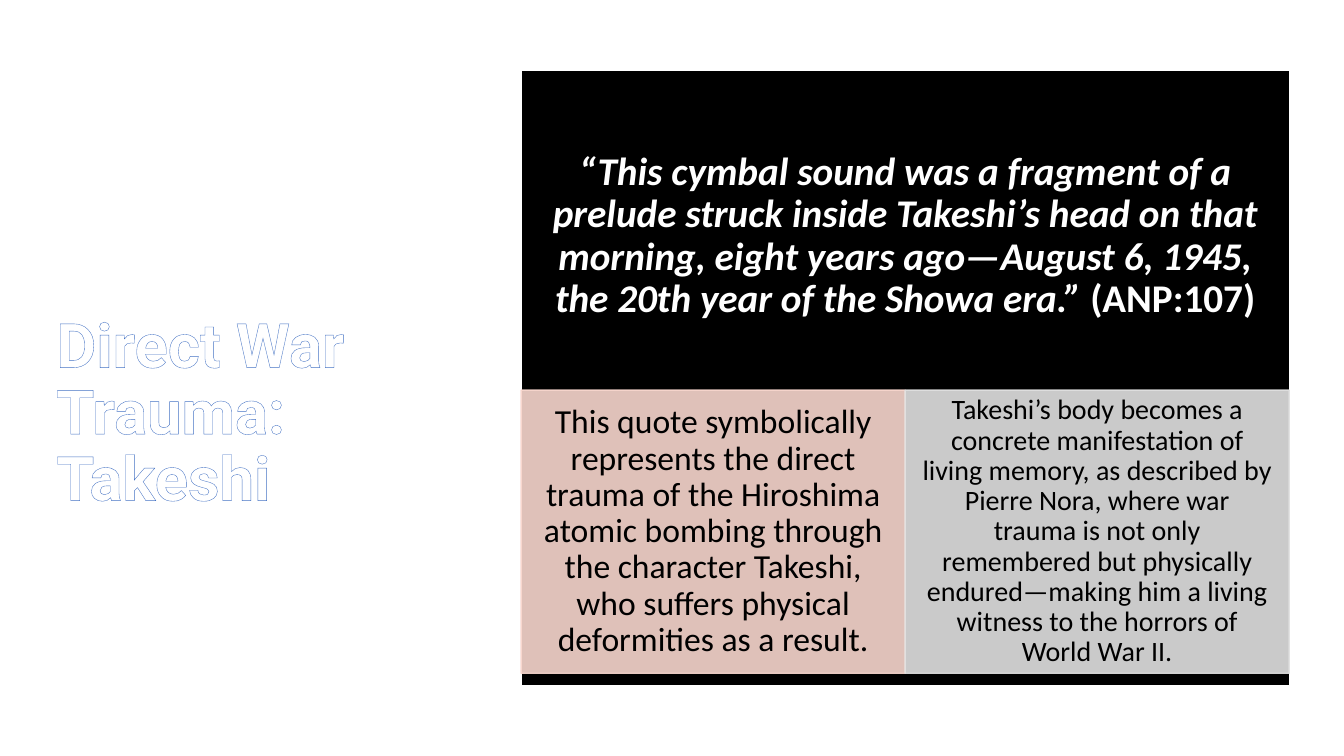
from lxml import etree
from pptx import Presentation
from pptx.dml.color import RGBColor
from pptx.enum.shapes import MSO_SHAPE
from pptx.enum.text import MSO_ANCHOR, PP_ALIGN
from pptx.oxml import parse_xml
from pptx.oxml.ns import nsdecls, qn
from pptx.util import Pt

RECTANGLE = MSO_SHAPE.RECTANGLE
TOP, MIDDLE = MSO_ANCHOR.TOP, MSO_ANCHOR.MIDDLE
LEFT, CENTER = PP_ALIGN.LEFT, PP_ALIGN.CENTER

COLORS = {
    "white": "FFFFFF",
    "black": "000000",
    "outline": "4472C4",
    "rose": "F8D7CE",
    "gray": "E1E1E1",
}


def add_rectangle(slide, left, top, width, height, fill, line, opacity=100):
    shape = slide.shapes.add_shape(RECTANGLE, Pt(left), Pt(top), Pt(width), Pt(height))
    shape.shadow.inherit = False
    shape.fill.solid()
    shape.fill.fore_color.rgb = RGBColor.from_string(COLORS[fill])
    shape.line.color.rgb = RGBColor.from_string(COLORS[line])
    shape.line.width = Pt(1)
    if opacity < 100:
        for color in shape._element.spPr.iter(qn("a:srgbClr")):
            etree.SubElement(color, qn("a:alpha"), val=str(opacity * 1000))
    return shape


def write_text(shape, runs, size, color, font, align, anchor, inset_x, inset_y):
    frame = shape.text_frame
    frame.word_wrap = True
    frame.vertical_anchor = anchor
    frame.margin_left = frame.margin_right = Pt(inset_x)
    frame.margin_top = frame.margin_bottom = Pt(inset_y)
    paragraph = frame.paragraphs[0]
    paragraph.alignment = align
    paragraph.line_spacing = 0.9
    for text, bold, italic in runs:
        run = paragraph.add_run()
        run.text = text
        run.font.name = font
        run.font.size = Pt(size)
        run.font.bold = bold
        run.font.italic = italic
        run.font.color.rgb = RGBColor.from_string(COLORS[color])
    return paragraph


presentation = Presentation()
presentation.slide_width = Pt(960)
presentation.slide_height = Pt(540)
slide = presentation.slides.add_slide(presentation.slide_layouts[6])

title = slide.shapes.add_textbox(Pt(33.12), Pt(221.04), Pt(310.32), Pt(277.2))
title_paragraph = write_text(title, [("Direct War Trauma: Takeshi", True, False)],
                             44, "white", "Roboto", LEFT, TOP, 7.2, 3.6)
outline = parse_xml(
    f'<a:ln {nsdecls("a")} w="{Pt(0.8)}"><a:solidFill>'
    f'<a:srgbClr val="{COLORS["outline"]}"/></a:solidFill></a:ln>'
)
title_paragraph.runs[0]._r.get_or_add_rPr().insert(0, outline)

board_left, board_top, board_width = 372.24, 50.4, 548.64
add_rectangle(slide, board_left, board_top, board_width, 439.2, "black", "white")

quote = slide.shapes.add_textbox(Pt(board_left), Pt(board_top), Pt(board_width), Pt(236.88))
quote_runs = [
    ("“This cymbal sound was a fragment of a prelude struck inside Takeshi’s head on "
     "that morning, eight years ago—August 6, 1945, the 20th year of the Showa era.”",
     True, True),
    (" (ANP:107)", True, False),
]
write_text(quote, quote_runs, 28, "white", "Calibri", CENTER, MIDDLE, 15.84, 15.84)

panels = [
    ("rose", 24, 13.44,
     "This quote symbolically represents the direct trauma of the Hiroshima atomic "
     "bombing through the character Takeshi, who suffers physical deformities as a result."),
    ("gray", 20, 11.2,
     "Takeshi’s body becomes a concrete manifestation of living memory, as described by "
     "Pierre Nora, where war trauma is not only remembered but physically endured—making "
     "him a living witness to the horrors of World War II."),
]
panel_width = board_width / len(panels)
for index, (color, size, inset, text) in enumerate(panels):
    panel = add_rectangle(slide, board_left + index * panel_width, 278.64,
                          panel_width, 202.32, color, color, opacity=90)
    write_text(panel, [(text, False, False)], size, "black", "Calibri",
               CENTER, MIDDLE, inset, 2)

presentation.save("out.pptx")
